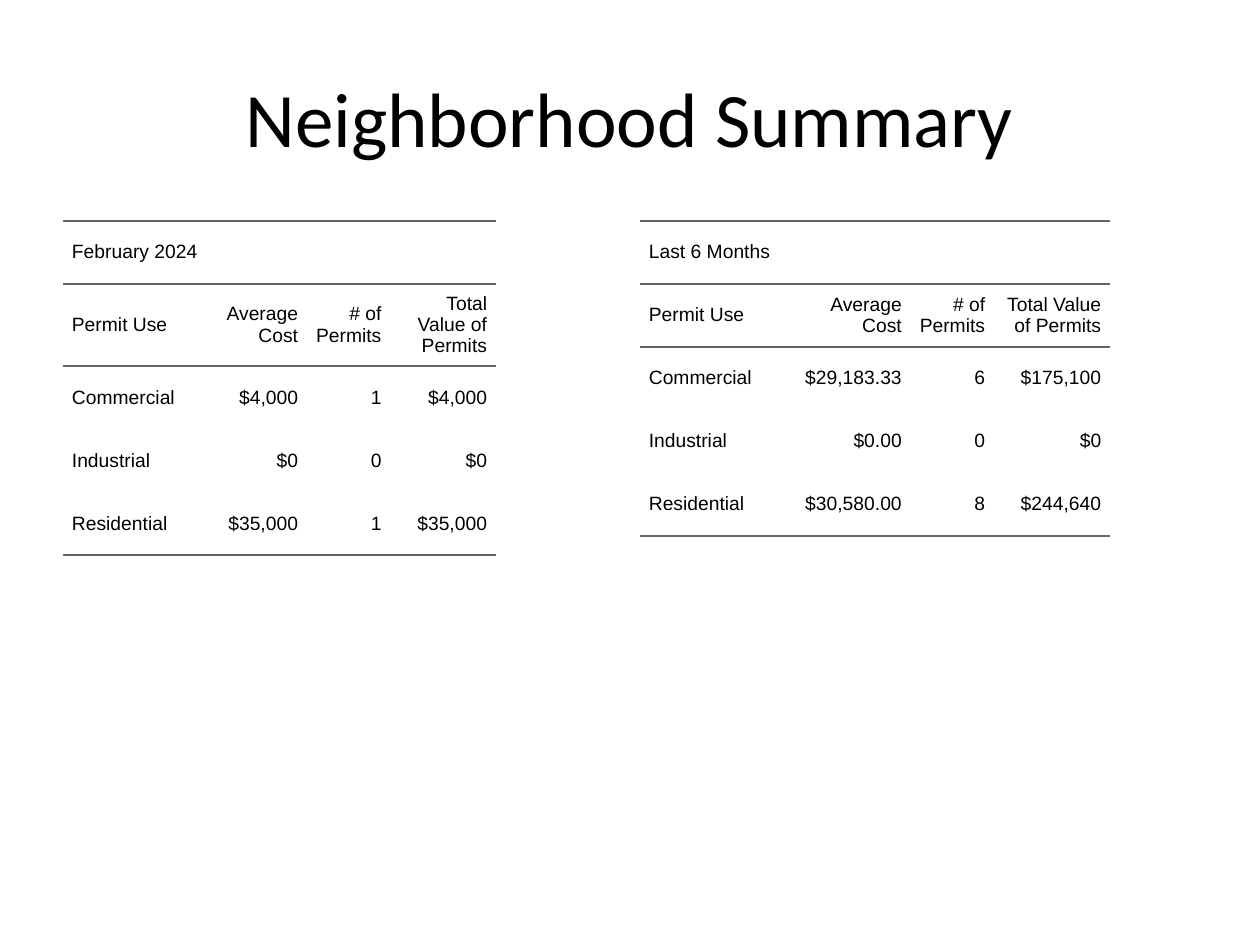
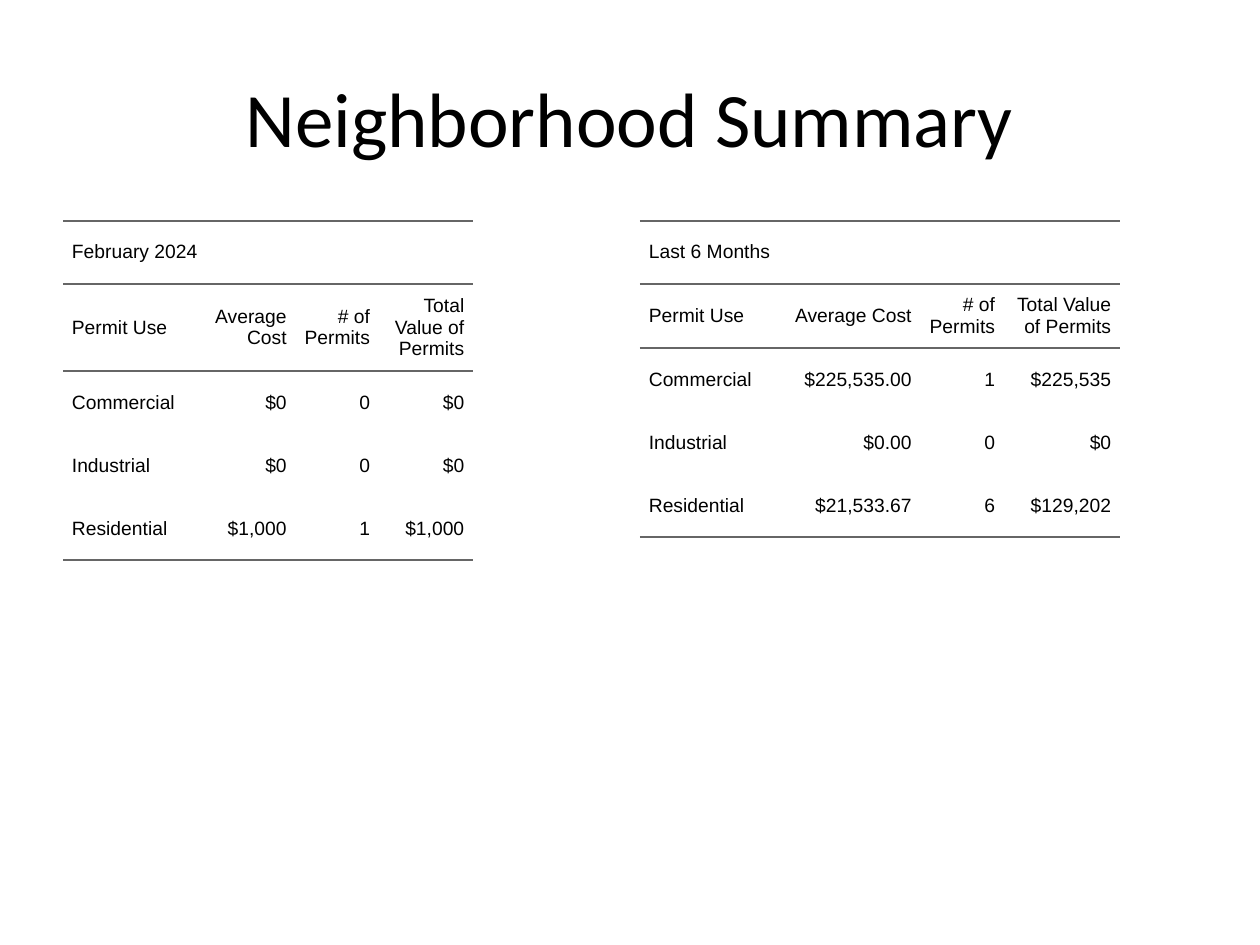
from dataclasses import dataclass
from lxml.etree import SubElement as Sub
from pptx import Presentation as Deck
from pptx.dml.color import RGBColor as Rgb
from pptx.enum.text import MSO_ANCHOR as Anchor, PP_ALIGN as Align
from pptx.oxml.ns import qn
from pptx.util import Cm, Pt


@dataclass(frozen=True)
class Theme:
    ink: str = "000000"
    rule: str = "666666"
    head: str = "Calibri"
    body: str = "Arial"
    big: int = 44
    small: int = 11
    line: float = 1.5
    pad: float = 0.18
    gap: int = 5


look = Theme()


def style(para, face, size, align):
    para.alignment = align
    para.font.name = face
    para.font.size = Pt(size)
    para.font.color.rgb = Rgb.from_string(look.ink)


def edge(cell, side, shown):
    """Draw or hide one side of a cell."""
    line = Sub(cell._tc.get_or_add_tcPr(), qn("a:ln" + side))
    if shown:
        line.set("w", str(Pt(look.line)))
        fill = Sub(line, qn("a:solidFill"))
        Sub(fill, qn("a:srgbClr")).set("val", look.rule)
    else:
        line.set("w", "0")
        Sub(line, qn("a:noFill"))


# Shared wording and grid
title = "Neighborhood Summary"
heads = ["Permit Use", "Average Cost", "# of Permits", "Total Value of Permits"]
uses = ["Commercial", "Industrial", "Residential"]
spans = ["February 2024", "Last 6 Months"]
lefts = [1.27, 12.9]
top, wide, tall, step = 4.45, 11.23, 12.57, 1.27
over, under = {0, 1, 2}, {0, 1, 4}  # rows ruled above and below

# Each slide: two tables, as column widths and figures per use
slides = [
    [
        ([2.79, 2.13, 1.68, 2.13],
         [("$4,000", "1", "$4,000"),
          ("$0", "0", "$0"),
          ("$35,000", "1", "$35,000")]),
        ([2.79, 2.67, 1.68, 2.34],
         [("$29,183.33", "6", "$175,100"),
          ("$0.00", "0", "$0"),
          ("$30,580.00", "8", "$244,640")]),
    ],
    [
        ([2.79, 1.9, 1.68, 1.9],
         [("$0", "0", "$0"),
          ("$0", "0", "$0"),
          ("$1,000", "1", "$1,000")]),
        ([2.79, 2.87, 1.68, 2.34],
         [("$225,535.00", "1", "$225,535"),
          ("$0.00", "0", "$0"),
          ("$21,533.67", "6", "$129,202")]),
    ],
]

deck = Deck()
deck.slide_width, deck.slide_height = Cm(25.4), Cm(19.05)

for pair in slides:
    slide = deck.slides.add_slide(deck.slide_layouts[6])

    # Permit tables
    for left, span, (cols, sums) in zip(lefts, spans, pair):
        rows = [[span, "", "", ""], heads]
        rows += [[use, *vals] for use, vals in zip(uses, sums)]
        frame = slide.shapes.add_table(
            len(rows), len(cols), Cm(left), Cm(top), Cm(wide), Cm(tall))
        table = frame.table
        table.first_row = table.horz_banding = False
        for col, width in zip(table.columns, cols):
            col.width = Cm(width)
        for row in table.rows:
            row.height = Cm(step)
        frame.width, frame.height = Cm(wide), Cm(tall)
        table.cell(0, 0).merge(table.cell(0, len(cols) - 1))

        for r, row in enumerate(rows):
            for c, text in enumerate(row):
                cell = table.cell(r, c)
                cell.text = text
                cell.vertical_anchor = Anchor.MIDDLE
                cell.margin_left = 0
                cell.margin_right = Cm(look.pad)
                cell.margin_top = cell.margin_bottom = Cm(look.pad)
                para = cell.text_frame.paragraphs[0]
                style(para, look.body, look.small,
                      Align.RIGHT if c else Align.LEFT)
                para.space_before = para.space_after = Pt(look.gap)
                props = para._p.get_or_add_pPr()
                props.set("marL", str(Cm(look.pad)))
                props.set("indent", "0")
                for side, shown in (("L", False), ("R", False),
                                    ("T", r in over), ("B", r in under)):
                    edge(cell, side, shown)
                cell.fill.background()

    # Title
    box = slide.shapes.add_textbox(Cm(1.27), Cm(0.76), Cm(22.86), Cm(3.18))
    frame = box.text_frame
    frame.word_wrap = True
    frame.vertical_anchor = Anchor.MIDDLE
    frame.text = title
    style(frame.paragraphs[0], look.head, look.big, Align.CENTER)

deck.save("out.pptx")
